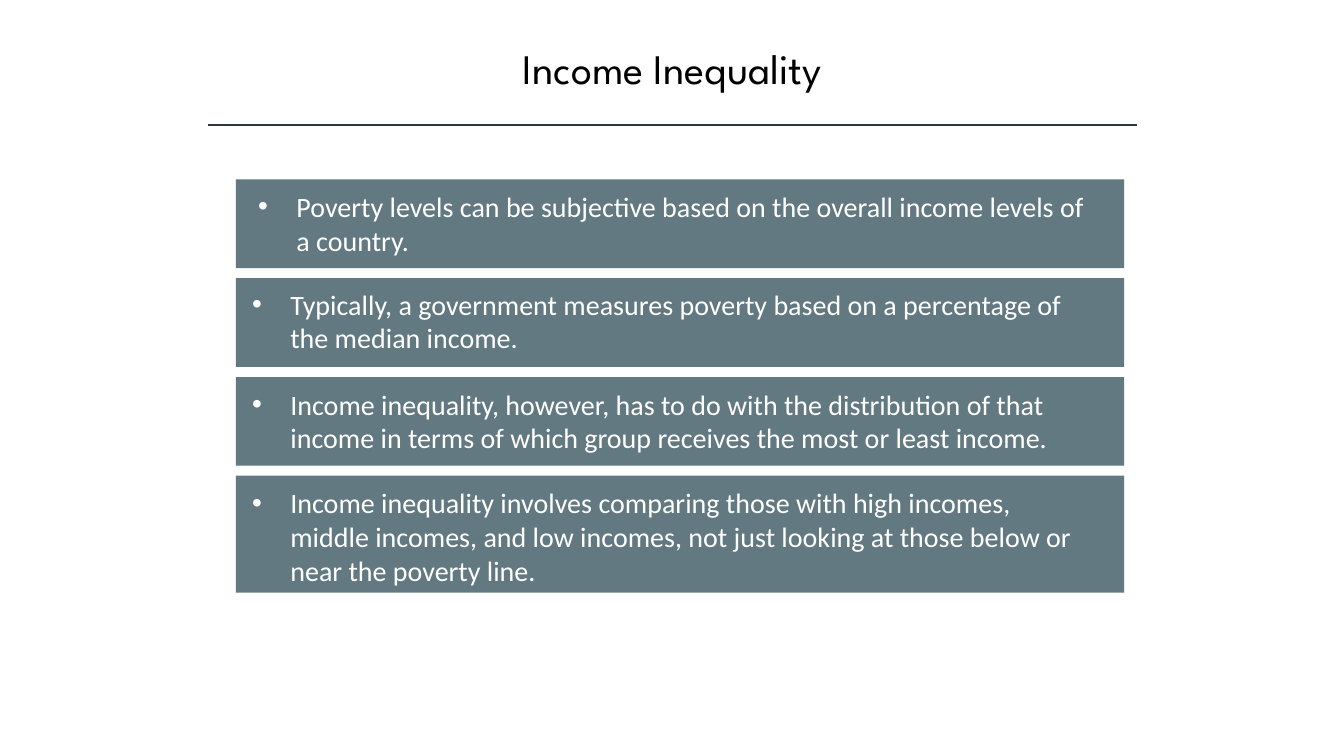
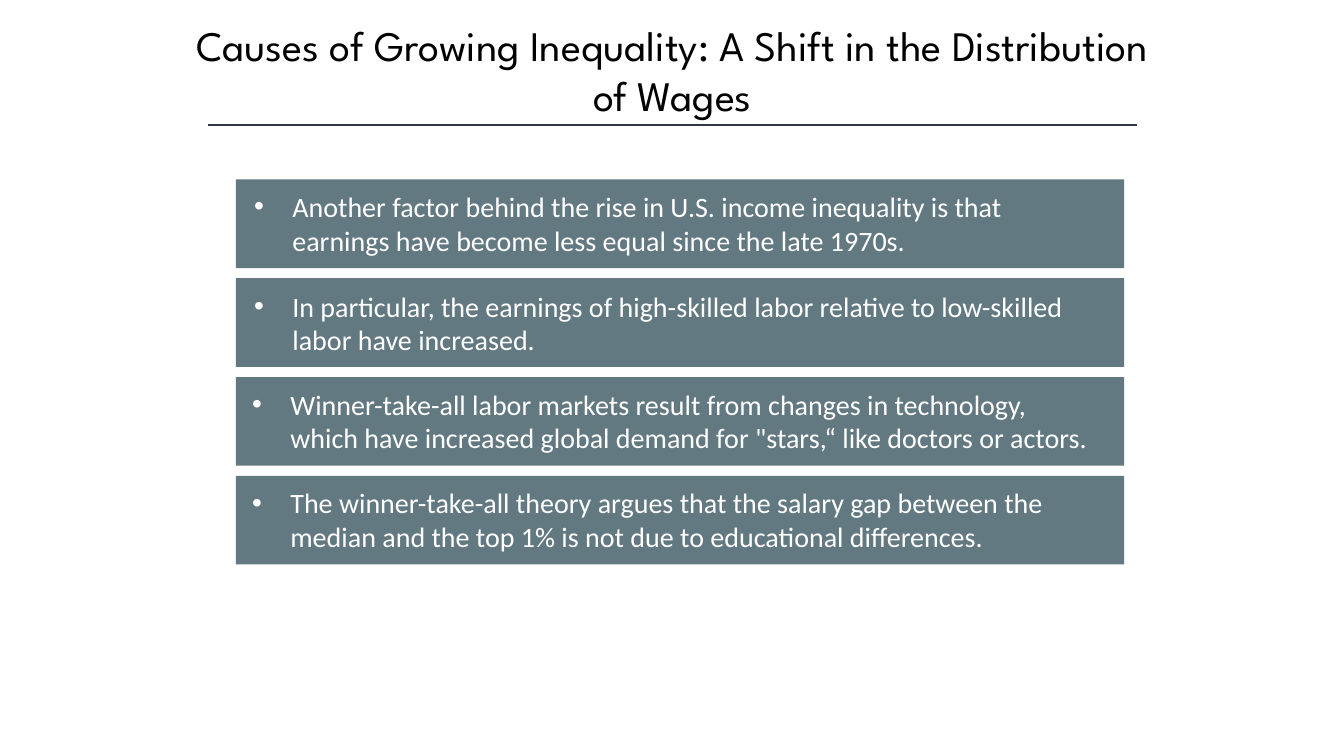
from dataclasses import dataclass

from lxml.etree import SubElement
from pptx import Presentation
from pptx.dml.color import RGBColor
from pptx.enum.shapes import MSO_CONNECTOR as Connector, MSO_SHAPE as Shape
from pptx.enum.text import MSO_ANCHOR as Anchor, PP_ALIGN as Align
from pptx.oxml.ns import qn
from pptx.util import Inches, Pt


@dataclass(frozen=True)
class Theme:
    ink: RGBColor = RGBColor(0x00, 0x00, 0x00)
    rule: RGBColor = RGBColor(0x32, 0x35, 0x42)
    card: RGBColor = RGBColor(0x62, 0x79, 0x81)
    card_text: RGBColor = RGBColor(0xFF, 0xFF, 0xFF)
    title_font: str = "League Spartan"
    body_font: str = "Calibri"
    title_size: int = 30
    body_size: int = 20
    rule_width: int = 1


THEME = Theme()
SLIDE_SIZE = (13.33, 7.5)
RULE = (2.06, 1.24, 9.22)
CARDS = (2.34, 1.78, 8.81)
CARD_HEIGHT = 0.88
CARD_GAP = 0.1
LINE_HEIGHT = 0.28
LABEL_WIDTH = 8.54
PADDING = (0.1, 0.05)
HANGING = 0.38

SLIDES = [
    ("Income Inequality", (1.67, 0.37, 10, 0.61), [
        ("Poverty levels can be subjective based on the overall income levels of a country.",
         (0.12, 0.05), 2),
        ("Typically, a government measures poverty based on a percentage of the median income.",
         (0.06, 0.04), 2),
        ("Income inequality, however, has to do with the distribution of that income in terms "
         "of which group receives the most or least income.", (0.06, 0.05), 2),
        ("Income inequality involves comparing those with high incomes, middle incomes, and low "
         "incomes, not just looking at those below or near the poverty line.", (0.06, 0.05), 3),
    ]),
    ("Causes of Growing Inequality: A Shift in the Distribution of Wages", (1.67, 0.14, 10, 1.11), [
        ("Another factor behind the rise in U.S. income inequality is that earnings have become "
         "less equal since the late 1970s.", (0.08, 0.05), 2),
        ("In particular, the earnings of high-skilled labor relative to low-skilled labor have "
         "increased.", (0.08, 0.06), 2),
        ("Winner-take-all labor markets result from changes in technology, which have increased "
         "global demand for \"stars,“ like doctors or actors.", (0.06, 0.05), 2),
        ("The winner-take-all theory argues that the salary gap between the median and the top "
         "1% is not due to educational differences.", (0.06, 0.05), 2),
    ]),
]


def style(paragraph, font, size, color):
    paragraph.font.name = font
    paragraph.font.size = Pt(size)
    paragraph.font.color.rgb = color


def add_bullet(paragraph):
    properties = paragraph._p.get_or_add_pPr()
    properties.set("marL", str(Inches(HANGING)))
    properties.set("indent", str(-Inches(HANGING)))
    SubElement(properties, qn("a:buFont")).set("typeface", "Arial")
    SubElement(properties, qn("a:buChar")).set("char", "•")


def add_title(slide, text, box):
    title = slide.shapes.add_textbox(*map(Inches, box)).text_frame
    title.word_wrap = True
    title.text = text
    heading = title.paragraphs[0]
    heading.alignment = Align.CENTER
    style(heading, THEME.title_font, THEME.title_size, THEME.ink)


def add_rule(slide, left, top, width):
    rule = slide.shapes.add_connector(
        Connector.STRAIGHT, Inches(left), Inches(top), Inches(left + width), Inches(top))
    rule.line.color.rgb = THEME.rule
    rule.line.width = Pt(THEME.rule_width)
    SubElement(rule._element.spPr, qn("a:effectLst"))


def add_card(slide, text, box, inset):
    card = slide.shapes.add_shape(Shape.RECTANGLE, *map(Inches, box))
    card.shadow.inherit = False
    card.fill.solid()
    card.fill.fore_color.rgb = THEME.card
    card.line.fill.background()
    label = card.text_frame
    label.word_wrap = True
    label.vertical_anchor = Anchor.TOP
    label.margin_left = Inches(inset[0] + PADDING[0])
    label.margin_right = Inches(box[2] - inset[0] - LABEL_WIDTH + PADDING[0])
    label.margin_top = Inches(inset[1] + PADDING[1])
    label.margin_bottom = 0
    label.text = text
    point = label.paragraphs[0]
    point.alignment = Align.LEFT
    style(point, THEME.body_font, THEME.body_size, THEME.card_text)
    add_bullet(point)


def add_cards(slide, points, left, top, width):
    for text, inset, lines in points:
        height = CARD_HEIGHT + (lines - 2) * LINE_HEIGHT
        add_card(slide, text, (left, top, width, height), inset)
        top += height + CARD_GAP


def main():
    deck = Presentation()
    deck.slide_width, deck.slide_height = map(Inches, SLIDE_SIZE)
    for title, title_box, points in SLIDES:
        slide = deck.slides.add_slide(deck.slide_layouts[6])
        add_title(slide, title, title_box)
        add_rule(slide, *RULE)
        add_cards(slide, points, *CARDS)
    deck.save("out.pptx")


if __name__ == "__main__":
    main()
